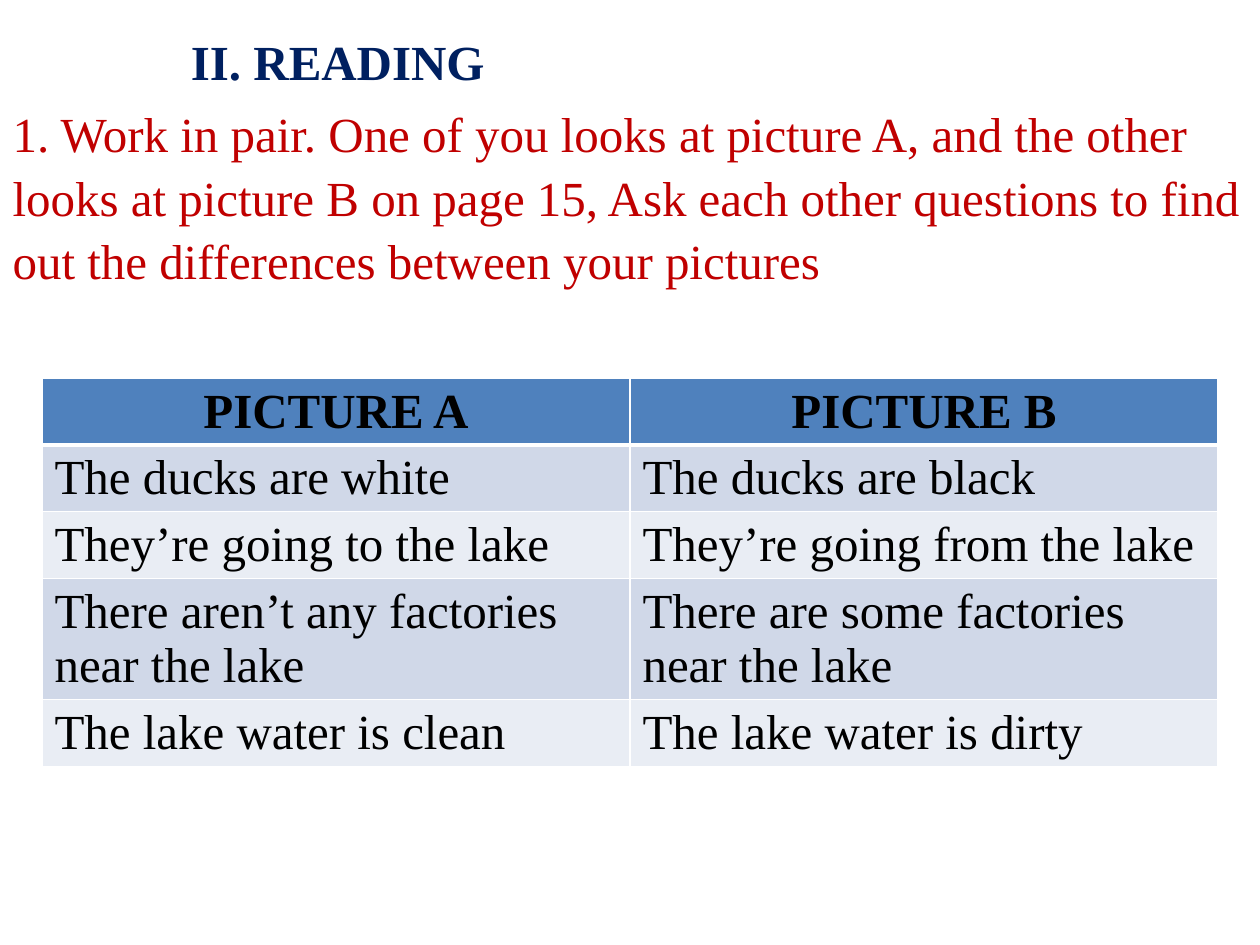
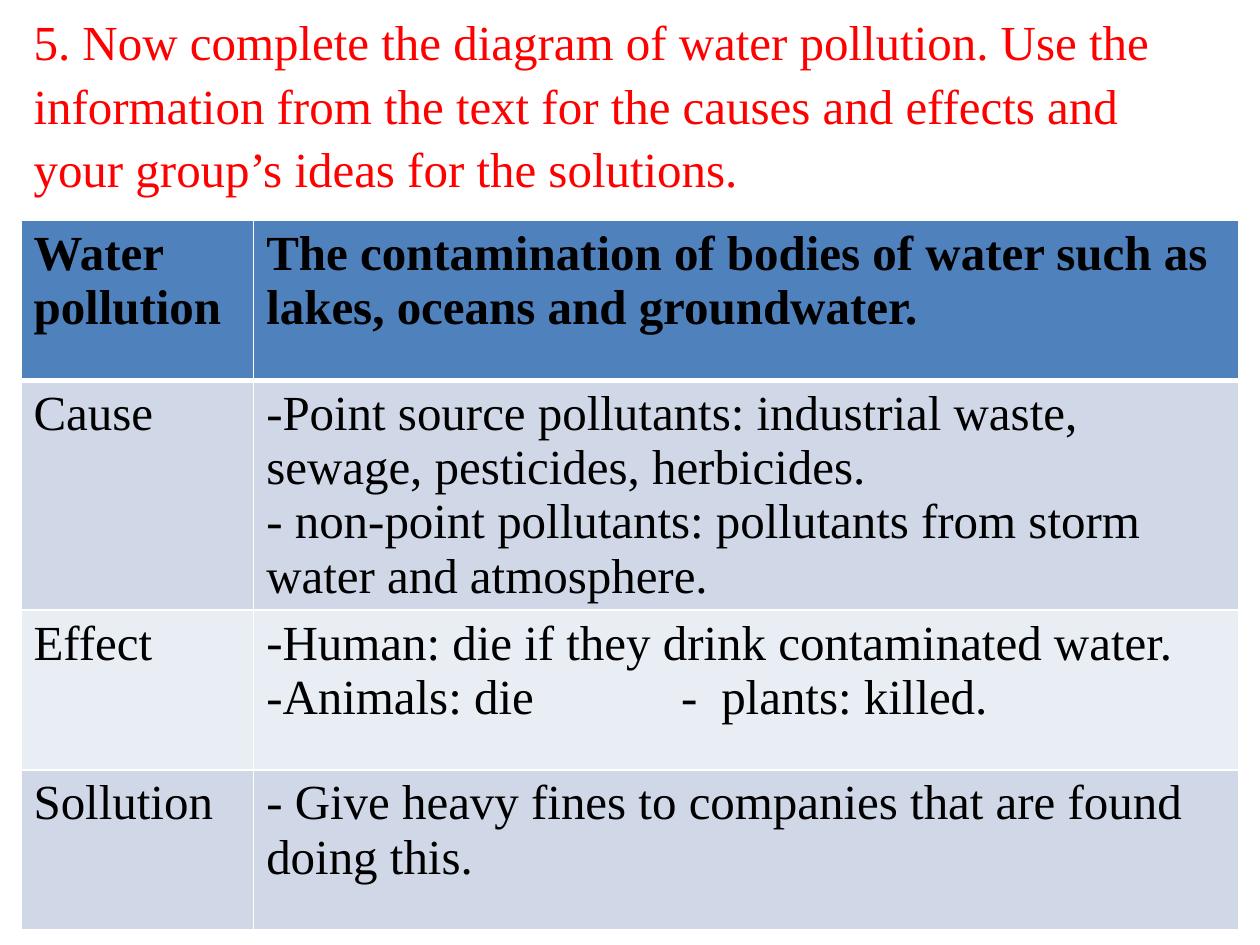
from dataclasses import dataclass
from typing import NamedTuple

from lxml.etree import SubElement
from pptx import Presentation
from pptx.dml.color import RGBColor as RGB
from pptx.enum.text import MSO_ANCHOR as Anchor
from pptx.enum.text import MSO_AUTO_SIZE as Fit
from pptx.enum.text import PP_ALIGN as Align
from pptx.oxml import parse_xml
from pptx.oxml.ns import nsdecls, qn
from pptx.util import Pt


@dataclass(frozen=True)
class Theme:
    face: str = "Times New Roman"
    size: float = 28
    lead: float = 1.08
    ink: str = "000000"
    navy: str = "002060"
    dark: str = "C00000"
    red: str = "FF0000"
    head: str = "4F81BD"
    bands: tuple[str, str] = ("D0D8E8", "E9EDF4")
    rule: str = "FFFFFF"
    thin: float = 1
    thick: float = 3


class Box(NamedTuple):
    left: float
    top: float
    width: float
    height: float


class Line(NamedTuple):
    text: str
    dash: bool = False
    tabs: tuple[float, ...] = ()


class Label(NamedTuple):
    text: str
    box: Box
    color: str
    bold: bool = False


class Grid(NamedTuple):
    left: float
    top: float
    cols: tuple[float, ...]
    rows: tuple[float, ...]
    cells: list[list[list[Line]]]
    align: Align = Align.LEFT  # header row only


class Page(NamedTuple):
    title: Label
    grid: Grid
    notes: tuple[Label, ...] = ()


THEME = Theme()


# Text
def style(para, color: str, bold: bool = False, align: Align = Align.LEFT) -> None:
    para.alignment = align
    font = para.font
    font.name, font.size, font.bold = THEME.face, Pt(THEME.size), bold
    font.color.rgb = RGB.from_string(color)


def write(shape, label: Label, anchor: Anchor) -> None:
    shape.left, shape.top, shape.width, shape.height = map(Pt, label.box)
    frame = shape.text_frame
    frame.text = label.text
    frame.word_wrap, frame.auto_size = True, Fit.NONE
    frame.vertical_anchor = anchor
    para = frame.paragraphs[0]
    para.line_spacing = THEME.lead
    style(para, label.color, label.bold)


def mark(para, line: Line) -> None:
    """Add the dash bullet and the tab stops of a line."""
    props = para._p.get_or_add_pPr()
    if line.dash:
        props.set("marL", "0")
        props.set("indent", "0")
        SubElement(props, qn("a:buFont"), typeface=THEME.face)
        SubElement(props, qn("a:buChar"), char="-")
    if line.tabs:
        stops = SubElement(props, qn("a:tabLst"))
        for stop in line.tabs:
            SubElement(stops, qn("a:tab"), pos=str(Pt(stop)), algn="l")


# Table
def edge(cell, row: int) -> None:
    """Rule the cell in white, heavier under the header."""
    top = THEME.thick if row == 1 else THEME.thin
    low = THEME.thick if row == 0 else THEME.thin
    sides = {"L": THEME.thin, "R": THEME.thin, "T": top, "B": low}
    props = cell._tc.get_or_add_tcPr()
    for spot, (side, width) in enumerate(sides.items()):
        props.insert(spot, parse_xml(
            f'<a:ln{side} {nsdecls("a")} w="{Pt(width)}"><a:solidFill>'
            f'<a:srgbClr val="{THEME.rule}"/></a:solidFill></a:ln{side}>'))


def fill(cell, lines: list[Line], row: int, align: Align) -> None:
    cell.fill.solid()
    tone = THEME.bands[(row - 1) % 2] if row else THEME.head
    cell.fill.fore_color.rgb = RGB.from_string(tone)
    edge(cell, row)
    frame = cell.text_frame
    frame.text = "\n".join(line.text for line in lines)
    for para, line in zip(frame.paragraphs, lines):
        mark(para, line)
        style(para, THEME.ink, row == 0, Align.LEFT if row else align)


def draw(slide, grid: Grid) -> None:
    table = slide.shapes.add_table(
        len(grid.rows), len(grid.cols), Pt(grid.left), Pt(grid.top),
        Pt(sum(grid.cols)), Pt(sum(grid.rows))).table
    for col, width in zip(table.columns, grid.cols):
        col.width = Pt(width)
    for row, height in zip(table.rows, grid.rows):
        row.height = Pt(height)
    for r, cells in enumerate(grid.cells):
        for c, lines in enumerate(cells):
            fill(table.cell(r, c), lines, r, grid.align)


# Content
ONE, TWO = 38.2, 69.2  # row heights for one and two lines of text
TALL, FOUR = 91.4, 131.2

PAIRS = [
    ("PICTURE A", "PICTURE B"),
    ("The ducks are white", "The ducks are black"),
    ("They’re going to the lake", "They’re going from the lake"),
    ("There aren’t any factories near the lake",
     "There are some factories near the lake"),
    ("The lake water is clean", "The lake water is dirty"),
]

FACTS = [
    ("Water pollution", [Line("The contamination of bodies of water such as "
                              "lakes, oceans and groundwater.")]),
    ("Cause", [
        Line("Point source pollutants: industrial waste, sewage, "
             "pesticides, herbicides.", dash=True),
        Line("- non-point pollutants: pollutants from storm water "
             "and atmosphere.")]),
    ("Effect", [
        Line("Human: die if they drink contaminated water.", dash=True),
        Line("Animals: die\t-\tplants: killed.", dash=True, tabs=(237, 260))]),
    ("Sollution", [Line("- Give heavy fines to companies that are found "
                        "doing this.")]),
]

PAGES = [
    Page(
        Label("1. Work in pair. One of you looks at picture A, and the other "
              "looks at picture B on page 15, Ask each other questions to "
              "find out the differences between your pictures",
              Box(0, 42, 720, 138), THEME.dark),
        Grid(24, 216, (336, 336), (ONE, ONE, ONE, TWO, ONE),
             [[[Line(text)] for text in pair] for pair in PAIRS],
             Align.CENTER),
        (Label("II. READING", Box(102, 12, 258, 41), THEME.navy, True),)),
    Page(
        Label("5. Now complete the diagram of water pollution. Use the "
              "information from the text for the causes and effects and "
              "your group’s ideas for the solutions.",
              Box(12, -9, 690, 135), THEME.red),
        Grid(12, 126, (133, 563), (TALL, FOUR, TALL, TALL),
             [[[Line(name)], lines] for name, lines in FACTS])),
]


def main() -> None:
    deck = Presentation()
    deck.slide_width, deck.slide_height = Pt(720), Pt(540)
    for page in PAGES:
        slide = deck.slides.add_slide(deck.slide_layouts[5])
        write(slide.shapes.title, page.title, Anchor.MIDDLE)
        draw(slide, page.grid)
        for note in page.notes:
            box = slide.shapes.add_textbox(*map(Pt, note.box))
            write(box, note, Anchor.TOP)
    deck.save("out.pptx")


if __name__ == "__main__":
    main()
